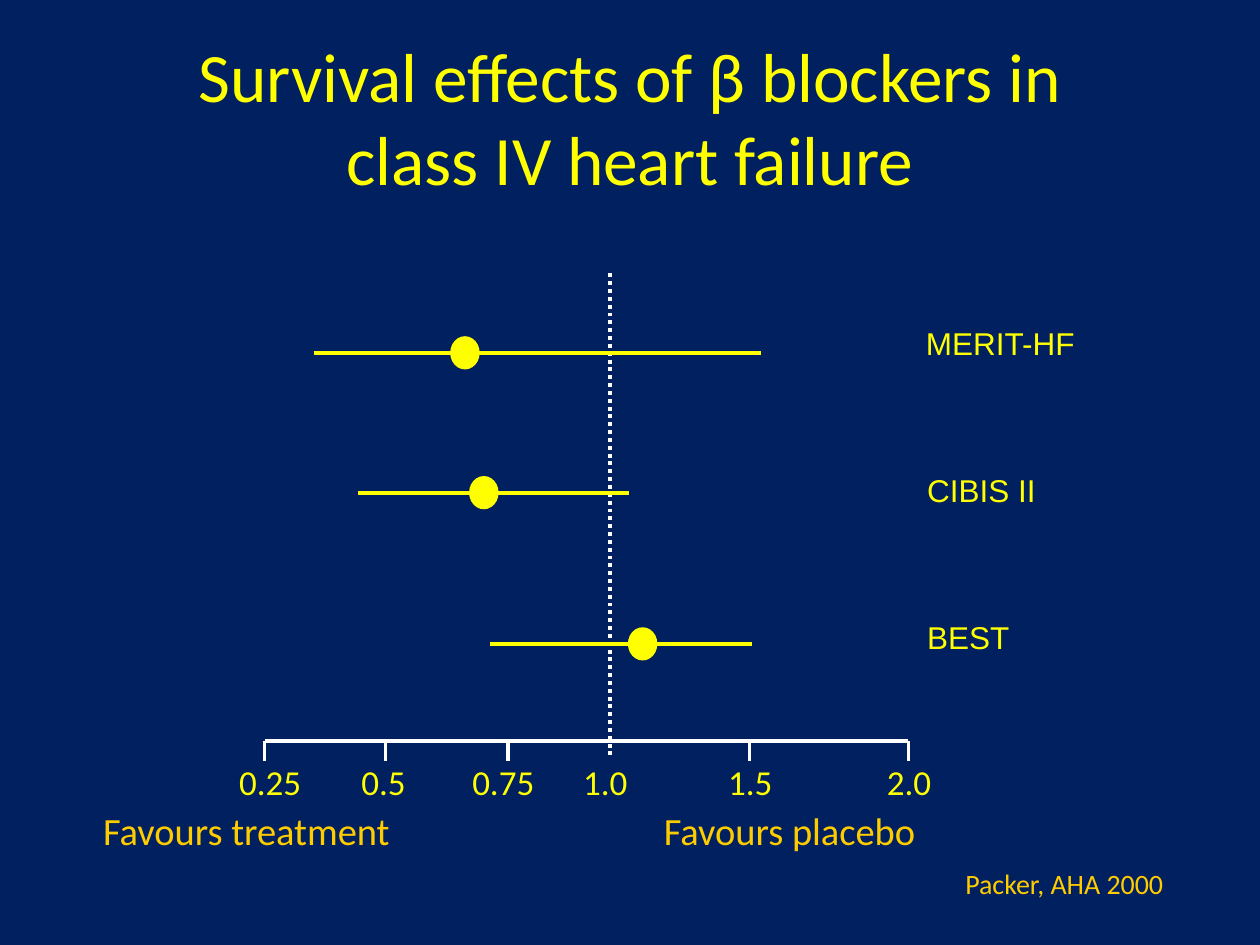
from dataclasses import dataclass

from lxml.etree import SubElement
from pptx import Presentation
from pptx.dml.color import RGBColor
from pptx.enum.dml import MSO_LINE
from pptx.enum.shapes import MSO_CONNECTOR, MSO_SHAPE
from pptx.enum.text import MSO_ANCHOR, MSO_AUTO_SIZE, PP_ALIGN
from pptx.oxml.ns import qn
from pptx.util import Inches, Pt

COLOURS = {"navy": "002060", "yellow": "FFFF00", "gold": "FFCC00", "white": "FFFFFF"}
AXIS_Y, TICK_END_Y, TICK_LABEL_Y = 5.88, 6.04, 5.99
LABEL_TOP, LABEL_STEP = 2.52, 1.17
MARKER_WIDTH, MARKER_HEIGHT = 0.22, 0.25


@dataclass(frozen=True)
class Trial:
    name: str
    low: float
    estimate: float
    high: float
    y: float
    label_left: float
    label_width: float


@dataclass(frozen=True)
class Tick:
    label: str
    x: float
    label_left: float
    label_width: float = 0.59
    marked: bool = True


TRIALS = [
    Trial("MERIT-HF", 2.49, 3.69, 6.04, 2.8, 7.25, 1.79),
    Trial("CIBIS II", 2.84, 3.84, 4.99, 3.91, 7.26, 1.37),
    Trial("BEST", 3.89, 5.1, 5.97, 5.11, 7.26, 1.09),
]
TICKS = [
    Tick("0.25", 2.1, 1.8, 0.74),
    Tick("0.5", 3.06, 2.77),
    Tick("0.75", 4.03, 3.65, 0.74),
    Tick("1.0", 4.84, 4.53, marked=False),
    Tick("1.5", 5.95, 5.68),
    Tick("2.0", 7.21, 6.94),
]


def colour(name: str) -> RGBColor:
    return RGBColor.from_string(COLOURS[name])


def add_line(slide, x1: float, y1: float, x2: float, y2: float,
             ink: str, width: float):
    line = slide.shapes.add_connector(
        MSO_CONNECTOR.STRAIGHT, Inches(x1), Inches(y1), Inches(x2), Inches(y2))
    line.line.color.rgb = colour(ink)
    line.line.width = Pt(width)
    SubElement(line._element.spPr, qn("a:effectLst"))
    return line


def add_text(slide, text: str, left: float, top: float, width: float, height: float,
             size: float, ink: str = "yellow", font: str = "Calibri",
             align: PP_ALIGN = PP_ALIGN.LEFT, wrap: bool = False):
    box = slide.shapes.add_textbox(
        Inches(left), Inches(top), Inches(width), Inches(height))
    frame = box.text_frame
    frame.text = text
    frame.word_wrap = wrap
    frame.auto_size = MSO_AUTO_SIZE.SHAPE_TO_FIT_TEXT
    paragraph = frame.paragraphs[0]
    paragraph.alignment = align
    paragraph.font.name = font
    paragraph.font.size = Pt(size)
    paragraph.font.color.rgb = colour(ink)
    return frame


def add_marker(slide, trial: Trial) -> None:
    marker = slide.shapes.add_shape(
        MSO_SHAPE.OVAL, Inches(trial.estimate - MARKER_WIDTH / 2),
        Inches(trial.y - MARKER_HEIGHT / 2), Inches(MARKER_WIDTH), Inches(MARKER_HEIGHT))
    marker.shadow.inherit = False
    marker.fill.solid()
    marker.fill.fore_color.rgb = colour("yellow")
    marker.line.color.rgb = colour("yellow")
    marker.line.width = Pt(1)


def add_axis(slide) -> None:
    add_line(slide, TICKS[0].x, AXIS_Y, TICKS[-1].x, AXIS_Y, "white", 2)
    for tick in TICKS:
        if tick.marked:
            add_line(slide, tick.x, TICK_END_Y, tick.x, AXIS_Y, "white", 2)
        add_text(slide, tick.label, tick.label_left, TICK_LABEL_Y,
                 tick.label_width, 0.43, 20)


def main() -> None:
    """Build the forest plot slide of beta blocker survival trials."""
    deck = Presentation()
    deck.slide_width, deck.slide_height = Inches(10), Inches(7.5)
    slide = deck.slides.add_slide(deck.slide_layouts[6])
    slide.background.fill.solid()
    slide.background.fill.fore_color.rgb = colour("navy")

    title = add_text(slide, "Survival effects of β blockers in\vclass IV heart failure",
                     0.5, 0.3, 9, 1.25, 39.6, align=PP_ALIGN.CENTER, wrap=True)
    title.auto_size = MSO_AUTO_SIZE.NONE
    title.vertical_anchor = MSO_ANCHOR.MIDDLE

    no_effect = add_line(slide, 4.84, 2.17, 4.84, 6, "white", 2.25)
    no_effect.line.dash_style = MSO_LINE.ROUND_DOT
    for row, trial in enumerate(TRIALS):
        add_line(slide, trial.low, trial.y, trial.high, trial.y, "yellow", 2.25)
        add_marker(slide, trial)
        add_text(slide, trial.name, trial.label_left, LABEL_TOP + row * LABEL_STEP,
                 trial.label_width, 0.5, 18, font="Arial")

    add_axis(slide)
    add_text(slide, "Favours treatment", 0.72, 6.36, 2.87, 0.47, 22, "gold")
    add_text(slide, "Favours placebo", 5.17, 6.36, 2.64, 0.47, 22, "gold")
    add_text(slide, "Packer, AHA 2000", 6.44, 6.83, 2.89, 0.36, 16, "gold",
             align=PP_ALIGN.RIGHT, wrap=True)
    deck.save("out.pptx")


if __name__ == "__main__":
    main()
